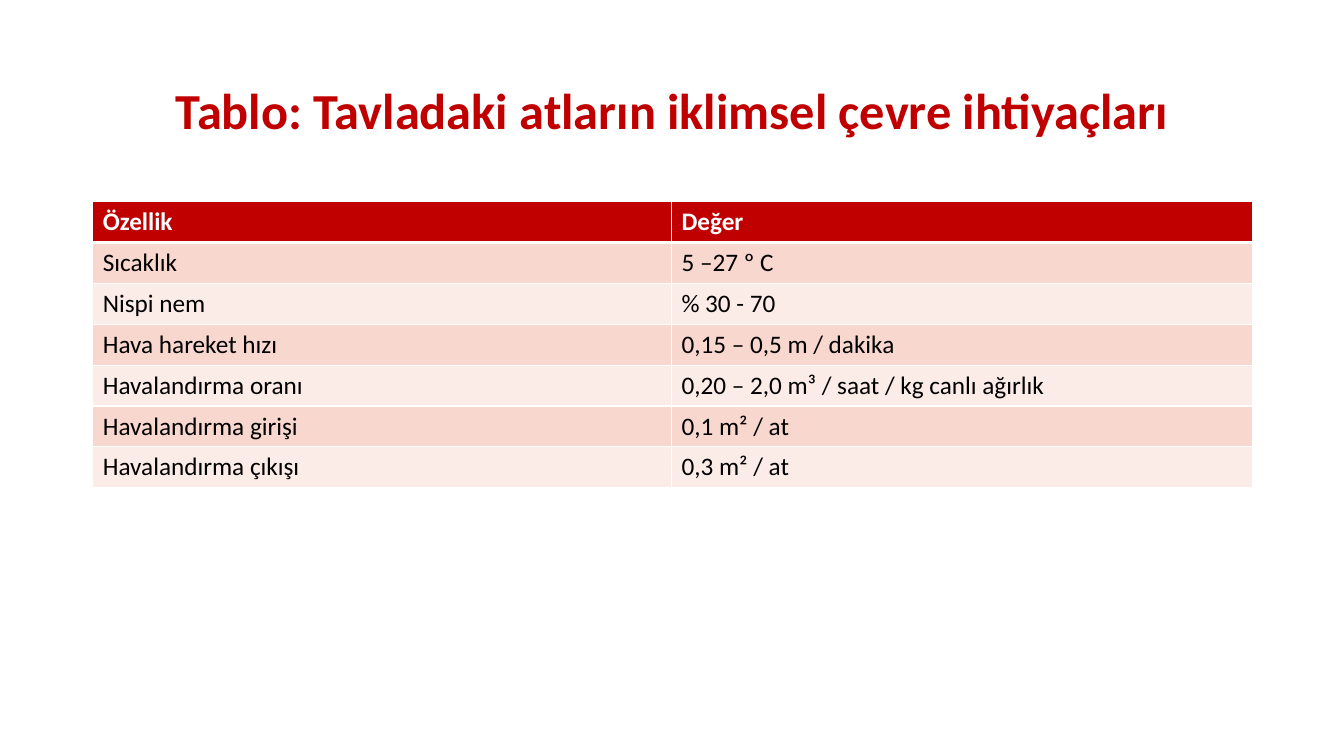
import dataclasses

import pptx
import pptx.dml.color
import pptx.enum.text
import pptx.oxml
import pptx.oxml.ns
import pptx.util

Inches = pptx.util.Inches
Pt = pptx.util.Pt


@dataclasses.dataclass(frozen=True)
class Theme:
    font: str = "Calibri"
    red: str = "C00000"
    white: str = "FFFFFF"
    black: str = "000000"
    bands: tuple = ("F8D7CE", "FCECE8")
    title: int = 36
    body: int = 18
    thin: int = 1
    thick: int = 3


THEME = Theme()
ROWS = [
    ("Özellik", "Değer"),
    ("Sıcaklık", "5 –27 º C"),
    ("Nispi nem", "% 30 - 70"),
    ("Hava hareket hızı", "0,15 – 0,5 m / dakika"),
    ("Havalandırma oranı", "0,20 – 2,0 m³ / saat / kg canlı ağırlık"),
    ("Havalandırma girişi", "0,1 m² / at"),
    ("Havalandırma çıkışı", "0,3 m² / at"),
]


def style(para, size, color, bold):
    font = para.font
    font.name = THEME.font
    font.size = Pt(size)
    font.bold = bold
    font.color.rgb = pptx.dml.color.RGBColor.from_string(color)


def border(cell, top, bottom):
    props = cell._tc.get_or_add_tcPr()
    widths = {"L": THEME.thin, "R": THEME.thin, "T": top, "B": bottom}
    for spot, (side, width) in enumerate(widths.items()):
        line = pptx.oxml.parse_xml(
            f'<a:ln{side} {pptx.oxml.ns.nsdecls("a")} w="{Pt(width)}">'
            f'<a:solidFill><a:srgbClr val="{THEME.white}"/></a:solidFill>'
            f'</a:ln{side}>'
        )
        props.insert(spot, line)


def add_title(slide, box, text):
    title = slide.shapes.title
    title.left, title.top, title.width, title.height = map(Inches, box)
    frame = title.text_frame
    frame.text = text
    frame.word_wrap = True
    frame.vertical_anchor = pptx.enum.text.MSO_ANCHOR.MIDDLE
    para = frame.paragraphs[0]
    para.alignment = pptx.enum.text.PP_ALIGN.CENTER
    para.line_spacing = 0.9
    style(para, THEME.title, THEME.red, True)


def add_grid(slide, box, first, rows):
    left, top, width, height = map(Inches, box)
    table = slide.shapes.add_table(
        len(rows), len(rows[0]), left, top, width, height
    ).table
    table.columns[0].width = Inches(first)
    table.columns[1].width = width - Inches(first)
    for r, row in enumerate(rows):
        head = r == 0
        fill = THEME.red if head else THEME.bands[(r - 1) % 2]
        color = THEME.white if head else THEME.black
        upper = THEME.thick if r == 1 else THEME.thin
        lower = THEME.thick if head else THEME.thin
        for c, text in enumerate(row):
            cell = table.cell(r, c)
            cell.text = text
            cell.fill.solid()
            cell.fill.fore_color.rgb = pptx.dml.color.RGBColor.from_string(fill)
            style(cell.text_frame.paragraphs[0], THEME.body, color, head)
            border(cell, upper, lower)


def main():
    deck = pptx.Presentation()
    deck.slide_width = Inches(13.33)
    deck.slide_height = Inches(7.5)
    slide = deck.slides.add_slide(deck.slide_layouts.get_by_name("Title Only"))
    add_title(
        slide,
        (0.92, 0.4, 11.5, 1.45),
        "Tablo: Tavladaki atların iklimsel çevre ihtiyaçları",
    )
    add_grid(slide, (0.92, 2, 11.5, 2.84), 5.74, ROWS)
    deck.save("out.pptx")


if __name__ == "__main__":
    main()
